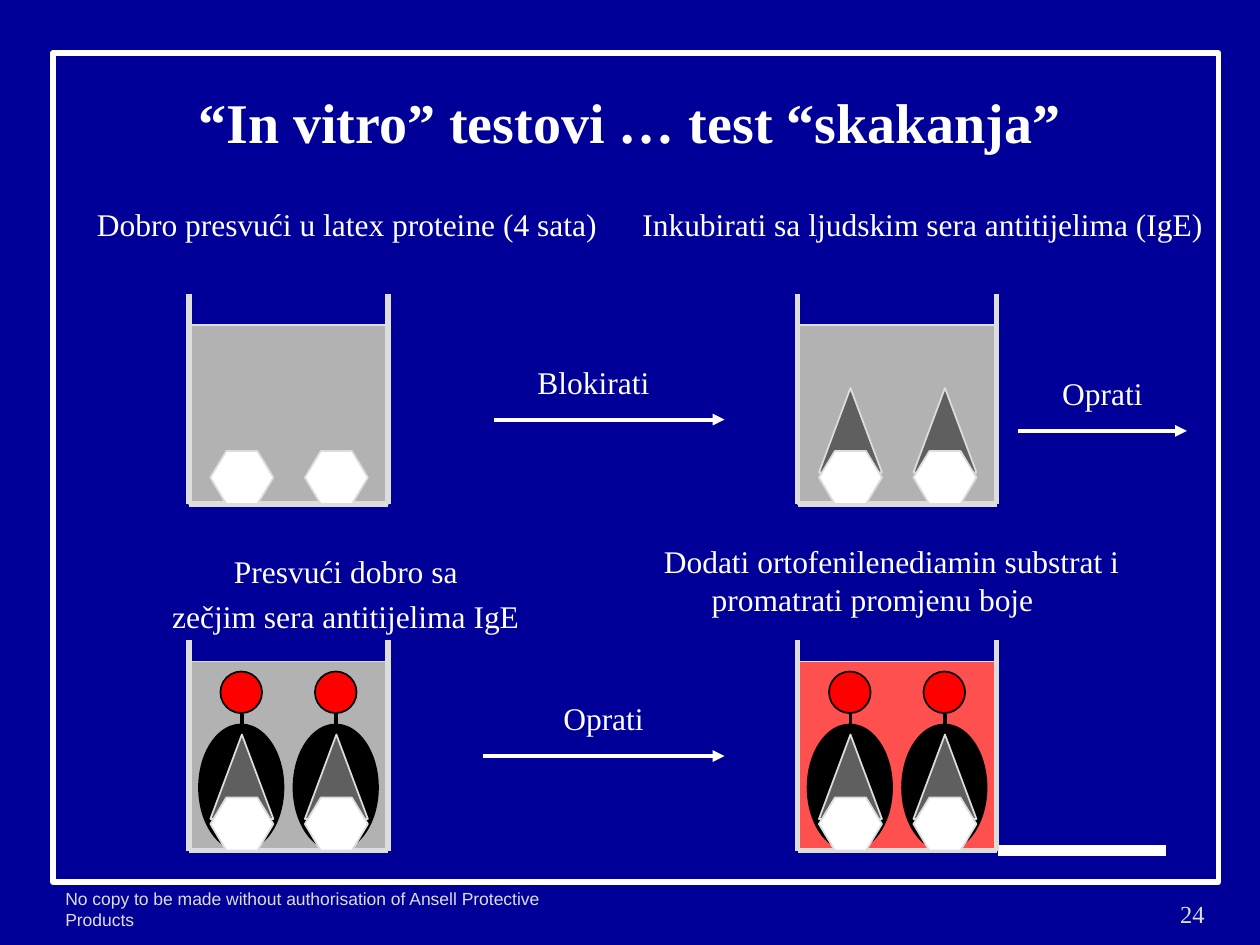
from lxml.etree import SubElement
from pptx import Presentation
from pptx.dml.color import RGBColor
from pptx.enum.shapes import MSO_CONNECTOR, MSO_SHAPE
from pptx.enum.text import MSO_ANCHOR, PP_ALIGN
from pptx.oxml.ns import qn
from pptx.util import Inches, Pt

NAVY = RGBColor(0x00, 0x00, 0x99)
WHITE = RGBColor(0xFF, 0xFF, 0xFF)
BLACK = RGBColor(0x00, 0x00, 0x00)
PALE = RGBColor(0xDD, 0xDD, 0xDD)
GREY = RGBColor(0xB2, 0xB2, 0xB2)
DARK_GREY = RGBColor(0x5F, 0x5F, 0x5F)
RED = RGBColor(0xFF, 0x00, 0x00)
CORAL = RGBColor(0xFF, 0x50, 0x50)
SERIF = "Times New Roman"

deck = Presentation()
deck.slide_width, deck.slide_height = Inches(10), Inches(7.5)
page = deck.slides.add_slide(deck.slide_layouts[6])
page.background.fill.solid()
page.background.fill.fore_color.rgb = NAVY


def add_figure(kind, left, top, width, height, fill, line=PALE, weight=1):
    figure = page.shapes.add_shape(
        kind, Inches(left), Inches(top), Inches(width), Inches(height))
    figure.shadow.inherit = False
    if fill is None:
        figure.fill.background()
    else:
        figure.fill.solid()
        figure.fill.fore_color.rgb = fill
    figure.line.color.rgb = line
    figure.line.width = Pt(weight)
    return figure


def add_line(x1, y1, x2, y2, color, weight):
    line = page.shapes.add_connector(
        MSO_CONNECTOR.STRAIGHT, Inches(x1), Inches(y1), Inches(x2), Inches(y2))
    line.line.color.rgb = color
    line.line.width = Pt(weight)
    SubElement(line._element.spPr, qn("a:effectLst"))
    return line


# Frame and corner rule
add_figure(MSO_SHAPE.RECTANGLE, 0.42, 0.42, 9.25, 6.58, None, WHITE, 3)
add_line(7.92, 6.75, 9.25, 6.75, WHITE, 6)

# Vessels: left, rim, surface, bottom, liquid, has antibody, has marker
vessels = [
    (1.5, 2.33, 2.58, 4, GREY, False, False),
    (6.33, 2.33, 2.58, 4, GREY, True, False),
    (1.5, 5.08, 5.25, 6.75, GREY, True, True),
    (6.33, 5.08, 5.25, 6.75, CORAL, True, True),
]
for left, rim, surface, bottom, liquid, has_antibody, has_marker in vessels:
    right = left + 1.58
    centers = (left + 0.42, left + 1.17)
    add_figure(MSO_SHAPE.RECTANGLE, left, surface, 1.58, bottom - surface, liquid)
    for center in centers:
        if has_marker:
            add_figure(MSO_SHAPE.OVAL, center - 0.34, bottom - 1, 0.67, 1, BLACK, BLACK)
            add_line(center, bottom - 1.08, center, bottom - 1, BLACK, 2.25)
            add_figure(MSO_SHAPE.OVAL, center - 0.17, bottom - 1.42, 0.33, 0.33, RED, BLACK)
        if has_antibody:
            add_figure(MSO_SHAPE.ISOSCELES_TRIANGLE, center - 0.25, bottom - 0.92,
                       0.5, 0.67, DARK_GREY)
    for wall in (left, right):
        add_line(wall, rim, wall, bottom, PALE, 3)
    add_line(left, bottom, right, bottom, PALE, 3)
    add_line(left, surface, right, surface, PALE, 1)
    for center in centers:
        protein = add_figure(MSO_SHAPE.HEXAGON, center - 0.25, bottom - 0.42,
                             0.5, 0.42, WHITE)
        protein.adjustments[0] = 0.3

# Arrows between the steps
for start, end, y in [(3.92, 5.75, 3.33), (8.08, 9.42, 3.42), (3.83, 5.75, 6)]:
    arrow = add_line(start, y, end, y, WHITE, 2.25)
    SubElement(arrow.line._get_or_add_ln(), qn("a:tailEnd"), type="triangle")

# Texts: place, lines, size, alignment, hanging indent, anchor
LEFT, CENTER, RIGHT = PP_ALIGN.LEFT, PP_ALIGN.CENTER, PP_ALIGN.RIGHT
TOP, MIDDLE = MSO_ANCHOR.TOP, MSO_ANCHOR.MIDDLE
texts = [
    ((0.75, 0.5, 8.5, 0.92), ["“In vitro” testovi … test “skakanja”"],
     32, CENTER, 0, MIDDLE),
    ((0.67, 1.58, 4.25, 0.42), ["Dobro presvući u latex proteine (4 sata)"],
     18, LEFT, 0.38, TOP),
    ((5, 1.58, 4.67, 0.42), ["Inkubirati sa ljudskim sera antitijelima (IgE)"],
     18, LEFT, 0.38, TOP),
    ((0.33, 4.33, 4.83, 0.42), ["Presvući dobro sa", "zečjim sera antitijelima IgE"],
     18, CENTER, 0.38, TOP),
    ((5.17, 4.25, 4.42, 0.42),
     ["Dodati ortofenilenediamin substrat i promatrati promjenu boje"],
     18, LEFT, 0.38, TOP),
    ((3.92, 2.83, 1.58, 0.4), ["Blokirati"], 18, CENTER, 0, TOP),
    ((8.25, 2.92, 1, 0.4), ["Oprati"], 18, CENTER, 0, TOP),
    ((4, 5.5, 1.58, 0.4), ["Oprati"], 18, CENTER, 0, TOP),
    ((0.42, 7, 4.54, 0.27),
     ["No copy to be made without authorisation of Ansell Protective Products"],
     10, LEFT, 0, TOP),
    ((8.83, 7, 0.83, 0.5), ["24"], 14, RIGHT, 0, MIDDLE),
]
for place, lines, size, alignment, indent, anchor in texts:
    box = page.shapes.add_textbox(*(Inches(value) for value in place))
    frame = box.text_frame
    frame.word_wrap = True
    frame.vertical_anchor = anchor
    frame.text = "\n".join(lines)
    for index, para in enumerate(frame.paragraphs):
        para.alignment = alignment
        if index:
            para.space_before = Pt(4)
        if indent:
            properties = para._p.get_or_add_pPr()
            properties.set("marL", str(Inches(indent)))
            properties.set("indent", str(-Inches(indent)))
        for span in para.runs:
            span.font.name = "Arial" if size == 10 else SERIF
            span.font.size = Pt(size)
            span.font.bold = size == 32
            span.font.color.rgb = PALE if size < 18 else WHITE

deck.save("out.pptx")
